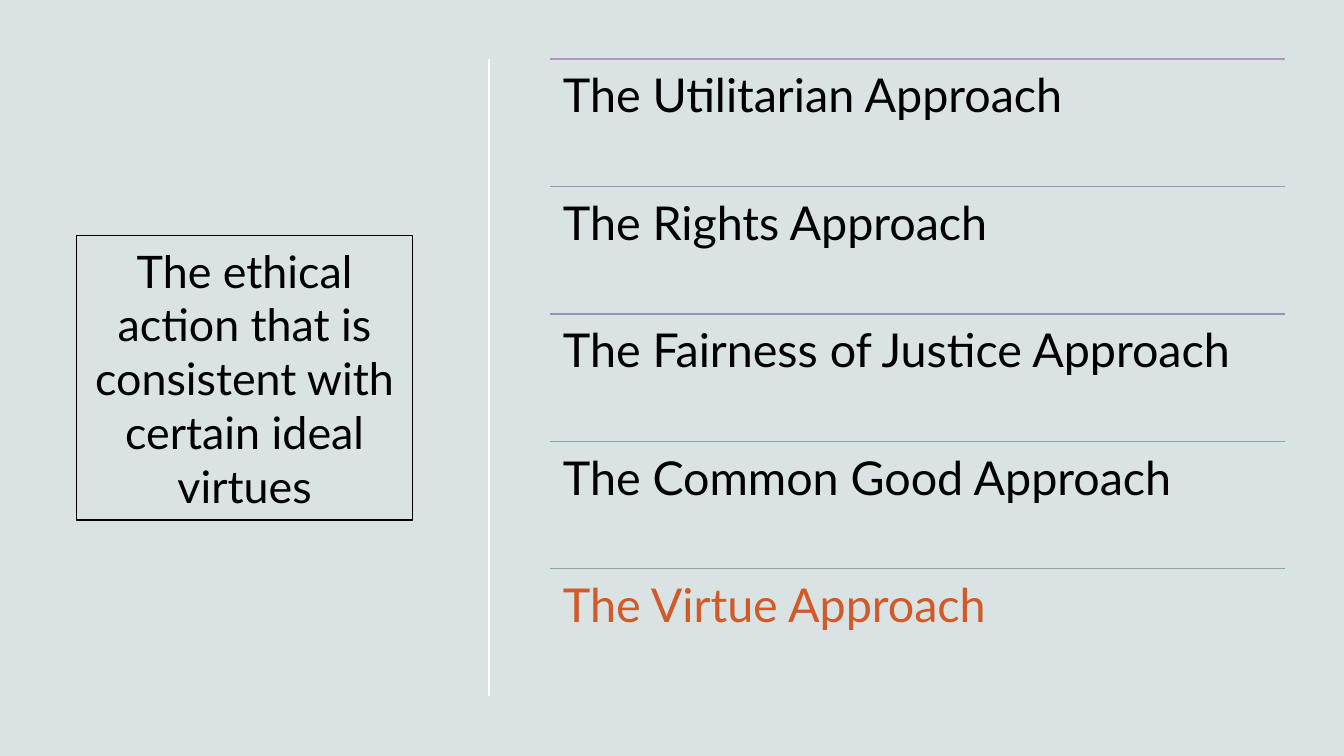
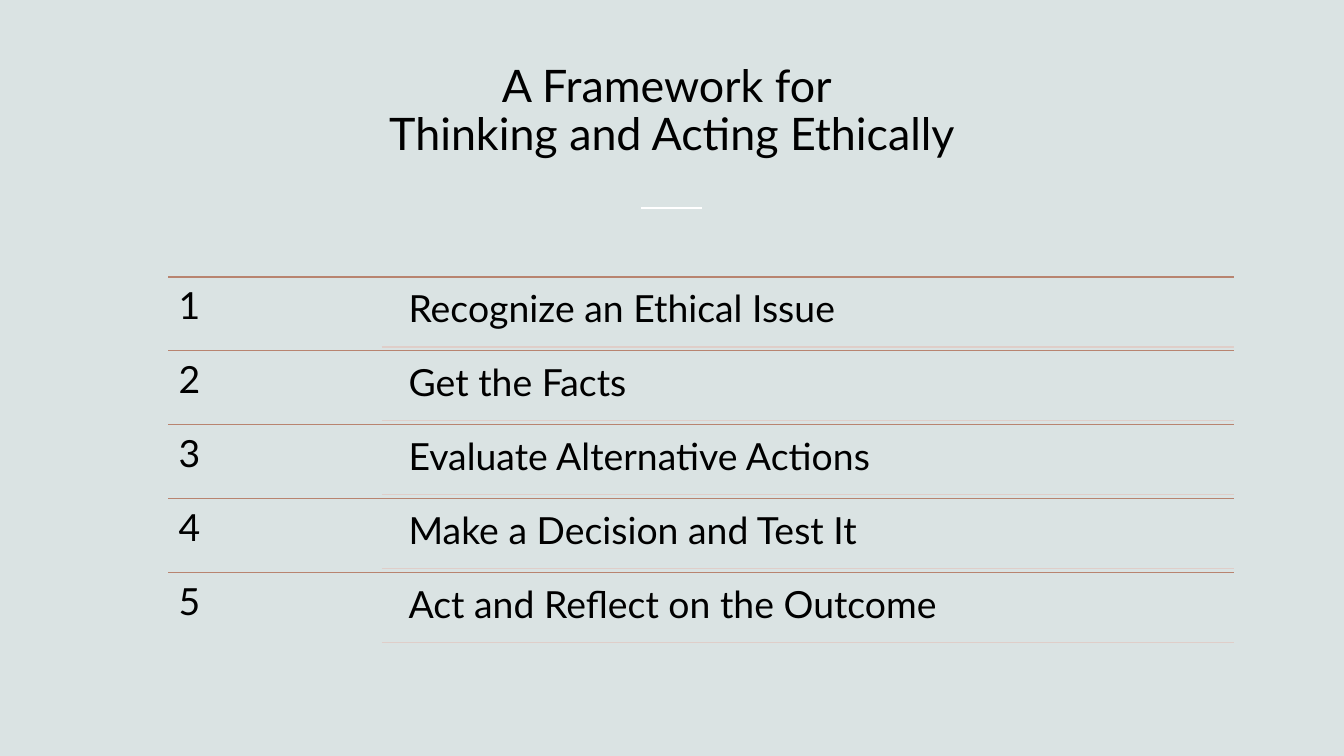
from dataclasses import dataclass

from pptx import Presentation
from pptx.dml.color import RGBColor as Rgb
from pptx.enum.shapes import MSO_CONNECTOR as Conn
from pptx.enum.text import MSO_ANCHOR as Anchor, PP_ALIGN as Align
from pptx.util import Inches, Pt
from lxml.etree import SubElement
from pptx.oxml.ns import qn


@dataclass(frozen=True)
class Theme:
    font: str = "Lato"
    back: str = "DAE3E3"
    ink: str = "000000"
    accent: str = "D15A29"
    white: str = "FFFFFF"
    rust: str = "B88470"
    pale: str = "DFCEC9"
    fade: tuple = ("B495C2", "9E93BB", "9197B3", "90A0AB", "8FA3A3")
    title: int = 24
    list: int = 25
    step: int = 20


theme = Theme()


def rule(shapes, x1, y1, x2, y2, color, width=0.75):
    line = shapes.add_connector(
        Conn.STRAIGHT, Inches(x1), Inches(y1), Inches(x2), Inches(y2))
    line.line.color.rgb = Rgb.from_string(color)
    line.line.width = Pt(width)
    SubElement(line._element.spPr, qn("a:effectLst"))


def label(shapes, text, x, y, w, h, size, color=theme.ink, pad=(0.1, 0.05),
          align=Align.LEFT, anchor=Anchor.TOP, space=0.9):
    box = shapes.add_textbox(Inches(x), Inches(y), Inches(w), Inches(h))
    frame = box.text_frame
    frame.word_wrap = True
    frame.vertical_anchor = anchor
    frame.margin_left = frame.margin_right = Inches(pad[0])
    frame.margin_top = frame.margin_bottom = Inches(pad[1])
    para = frame.paragraphs[0]
    para.text = text
    para.alignment = align
    para.line_spacing = space
    para.font.name = theme.font
    para.font.size = Pt(size)
    para.font.color.rgb = Rgb.from_string(color)
    return box


# Deck with two plain tinted slides
deck = Presentation()
deck.slide_width = Inches(10)
deck.slide_height = Inches(10 * 9 / 16)
blank = deck.slide_layouts[6]
virtue, frame = [deck.slides.add_slide(blank) for _ in range(2)]
for slide in (virtue, frame):
    slide.background.fill.solid()
    slide.background.fill.fore_color.rgb = Rgb.from_string(theme.back)

# Slide 1: framed definition and divider
box = label(virtue.shapes,
            "The ethical action that is consistent with certain ideal virtues",
            0.57, 1.75, 2.5, 2.12, theme.title,
            align=Align.CENTER, anchor=Anchor.MIDDLE, space=1.0)
box.line.color.rgb = Rgb.from_string(theme.ink)
box.line.width = Pt(0.75)
top, end = 0.44, 5.18
rule(virtue.shapes, 3.64, top, 3.64, end, theme.white, 1)

# Slide 1: list of approaches, the current one in the accent colour
names = ("Utilitarian", "Rights", "Fairness of Justice", "Common Good", "Virtue")
left, right = 4.09, 9.56
pitch = (end - top) / len(names)
group = virtue.shapes.add_group_shape().shapes
for row, (name, color) in enumerate(zip(names, theme.fade)):
    y = top + row * pitch
    rule(group, left, y, right, y, color)
    label(group, f"The {name} Approach", left, y, right - left, pitch,
          theme.list, theme.accent if name == "Virtue" else theme.ink,
          pad=(0.1, 0.1))

# Slide 2: title with a short rule below
label(frame.shapes, "A Framework for \vThinking and Acting Ethically",
      0.81, 0.32, 8.38, 0.92, theme.title,
      align=Align.CENTER, anchor=Anchor.BOTTOM)
rule(frame.shapes, 4.77, 1.55, 5.22, 1.55, theme.white, 1)

# Slide 2: numbered steps
steps = ("Recognize an Ethical Issue", "Get the Facts",
         "Evaluate Alternative Actions", "Make a Decision and Test It",
         "Act and Reflect on the Outcome")
left, right, pitch = 1.25, 9.18, 0.55
pad = (0.08, 0.08)
group = frame.shapes.add_group_shape().shapes
for row, step in enumerate(steps):
    y = 2.06 + row * pitch
    rule(group, left, y, right, y, theme.rust)
    label(group, str(row + 1), left, y, 1.59, pitch, theme.step, pad=pad)
    label(group, step, 2.96, y + 0.02, 6.22, 0.5, theme.step, pad=pad)
    rule(group, 2.84, y + 0.52, right, y + 0.52, theme.pale, 0.85)

deck.save("out.pptx")
